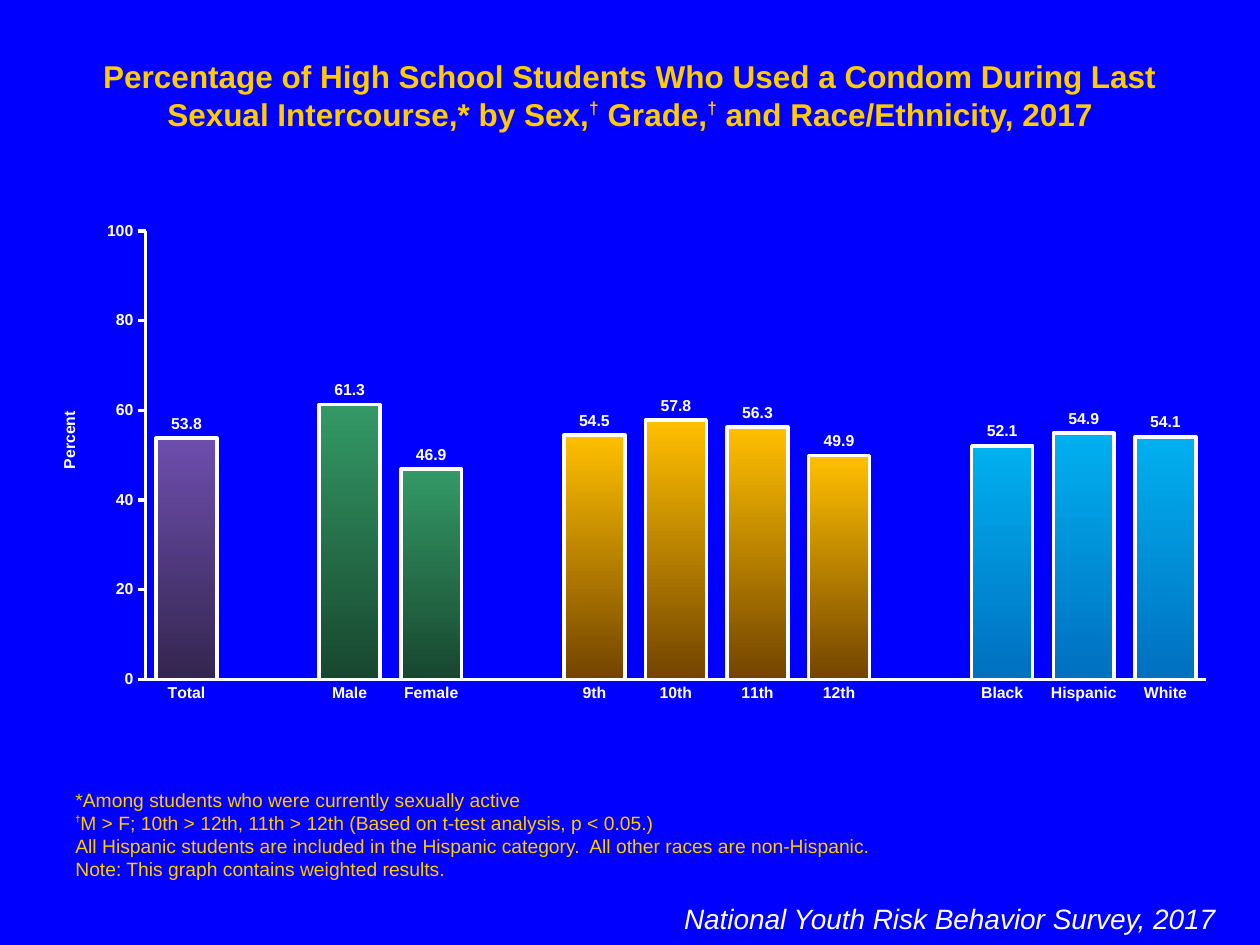
from dataclasses import dataclass

from lxml import etree
from pptx import Presentation
from pptx.chart.data import CategoryChartData
from pptx.dml.color import RGBColor
from pptx.enum.chart import XL_CHART_TYPE, XL_LABEL_POSITION, XL_TICK_MARK
from pptx.enum.text import MSO_ANCHOR, MSO_AUTO_SIZE, PP_ALIGN
from pptx.oxml.ns import qn
from pptx.util import Emu, Pt

COLUMN = XL_CHART_TYPE.COLUMN_CLUSTERED
OUTSIDE_END = XL_LABEL_POSITION.OUTSIDE_END
TICK_NONE, TICK_OUT = XL_TICK_MARK.NONE, XL_TICK_MARK.OUTSIDE
LEFT, CENTER, RIGHT = PP_ALIGN.LEFT, PP_ALIGN.CENTER, PP_ALIGN.RIGHT
TOP, BOTTOM = MSO_ANCHOR.TOP, MSO_ANCHOR.BOTTOM
NO_AUTOFIT = MSO_AUTO_SIZE.NONE
PX_PER_INCH = 126


@dataclass(frozen=True)
class Theme:
    font: str = "Arial"
    background: str = "0000FF"
    accent: str = "FFCC00"
    light: str = "FFFFFF"
    title: int = 18
    title_mark: int = 17
    source: int = 16
    note: int = 11
    note_mark: int = 9
    chart: int = 9
    line: int = 2


@dataclass(frozen=True)
class Box:
    left: int
    top: int
    width: int
    height: int

    def emu(self) -> list[Emu]:
        return [px(n) for n in (self.left, self.top, self.width, self.height)]


@dataclass(frozen=True)
class Group:
    """Neighbouring bars that share one gradient."""
    top: str
    bottom: str
    bars: dict[str, float]


THEME = Theme()
GROUPS = [
    Group("6E4EAE", "33264F", {"Total": 53.8}),
    Group("339966", "18472F", {"Male": 61.3, "Female": 46.9}),
    Group("FFC000", "734400",
          {"9th": 54.5, "10th": 57.8, "11th": 56.3, "12th": 49.9}),
    Group("00B0F0", "0070C0",
          {"Black": 52.1, "Hispanic": 54.9, "White": 54.1}),
]
TITLE = ["Percentage of High School Students Who Used a Condom During Last "
         "Sexual Intercourse,* by Sex,", "†", " Grade,", "†",
         " and Race/Ethnicity, 2017"]
NOTES = [
    ["*Among students who were currently sexually active"],
    ["†", "M > F; 10th > 12th, 11th > 12th (Based on t-test analysis, p < 0.05.)"],
    ["All Hispanic students are included in the Hispanic category.  "
     "All other races are non-Hispanic."],
    ["Note: This graph contains weighted results."],
]


def px(n: int) -> Emu:
    return Emu(round(n * 914400 / PX_PER_INCH))


def rgb(color: str) -> RGBColor:
    return RGBColor.from_string(color)


def style_font(font, size: int, color: str, bold=False, italic=False) -> None:
    font.name, font.size = THEME.font, Pt(size)
    font.bold, font.italic = bold, italic
    font.color.rgb = rgb(color)


def write(sp, paragraphs: list[list[str]], *, size: int, color: str,
          align=LEFT, anchor=TOP, bold=False, italic=False,
          mark_size: int = 0, mark_raise: int = 0) -> None:
    """Fill a shape with paragraphs of runs; daggers are superscript."""
    tf = sp.text_frame
    tf.word_wrap, tf.auto_size, tf.vertical_anchor = True, NO_AUTOFIT, anchor
    for i, runs in enumerate(paragraphs):
        p = tf.add_paragraph() if i else tf.paragraphs[0]
        p.alignment = align
        for text in runs:
            r = p.add_run()
            r.text = text
            is_mark = text == "†"
            style_font(r.font, mark_size if is_mark else size, color,
                       bold or is_mark, italic)
            if is_mark:
                r.font._element.set("baseline", str(mark_raise * 1000))


def set_layout(parent, following: str, x: float, y: float,
               w: float = 0, h: float = 0) -> None:
    """Place a chart part by fractions of the chart space."""
    for old in parent.findall(qn("c:layout")):
        parent.remove(old)
    layout = etree.Element(qn("c:layout"))
    manual = etree.SubElement(layout, qn("c:manualLayout"))
    values = {"xMode": "edge", "yMode": "edge", "x": x, "y": y}
    if w:
        values = {"layoutTarget": "inner", **values, "w": w, "h": h}
    for tag, value in values.items():
        etree.SubElement(manual, qn(f"c:{tag}")).set("val", str(value))
    parent.find(qn(following)).addprevious(layout)


def style_axis(axis, tick) -> None:
    axis.major_tick_mark, axis.minor_tick_mark = tick, TICK_NONE
    axis.has_major_gridlines = False
    style_font(axis.tick_labels.font, THEME.chart, THEME.light, bold=True)
    axis.format.line.color.rgb = rgb(THEME.light)
    axis.format.line.width = Pt(THEME.line)


def add_bar_chart(slide, box: Box, groups: list[Group]) -> None:
    # One empty category separates the groups
    bars = []
    for i, group in enumerate(groups):
        if i:
            bars.append(("", None, None))
        bars += [(name, value, group) for name, value in group.bars.items()]
    data = CategoryChartData(number_format="#,##0.0")
    data.categories = [name for name, _, _ in bars]
    data.add_series("Series 1", [value for _, value, _ in bars])
    chart = slide.shapes.add_chart(COLUMN, *box.emu(), data).chart
    chart.has_title = chart.has_legend = False
    style_font(chart.font, THEME.chart, THEME.light)

    # Axes
    style_axis(chart.category_axis, TICK_NONE)
    axis = chart.value_axis
    style_axis(axis, TICK_OUT)
    axis.minimum_scale, axis.maximum_scale, axis.major_unit = 0, 100, 20
    axis.tick_labels.number_format = "General"
    axis.tick_labels.number_format_is_linked = False
    r = axis.axis_title.text_frame.paragraphs[0].add_run()
    r.text = "Percent"
    style_font(r.font, THEME.chart, THEME.light, bold=True)
    set_layout(axis.axis_title._element, "c:overlay", 0.02, 0.39)

    # Bars and value labels
    plot = chart.plots[0]
    plot.gap_width, plot.overlap, plot.vary_by_categories = 34, 100, False
    plot.has_data_labels = True
    labels = plot.data_labels
    labels.show_value, labels.position = True, OUTSIDE_END
    labels.number_format, labels.number_format_is_linked = "#,##0.0", False
    style_font(labels.font, THEME.chart, THEME.light, bold=True)
    for i, (_, _, group) in enumerate(bars):
        if group is None:
            continue
        fmt = plot.series[0].points[i].format
        fmt.fill.gradient()
        fmt.fill.gradient_angle = 270
        for stop, color in zip(fmt.fill.gradient_stops,
                               (group.top, group.bottom)):
            stop.color.rgb = rgb(color)
        fmt.line.color.rgb = rgb(THEME.light)
        fmt.line.width = Pt(THEME.line)
    plot_area = plot._element.getparent()
    set_layout(plot_area, "c:barChart", 0.095, 0.036, 0.886, 0.895)


def main() -> None:
    prs = Presentation()
    prs.slide_width, prs.slide_height = px(1260), px(945)
    slide = prs.slides.add_slide(prs.slide_layouts[5])
    slide.background.fill.solid()
    slide.background.fill.fore_color.rgb = rgb(THEME.background)

    # Title
    title = slide.shapes.title
    title.left, title.top, title.width, title.height = Box(63, 51, 1134, 88).emu()
    write(title, [TITLE], size=THEME.title, color=THEME.accent, align=CENTER,
          bold=True, mark_size=THEME.title_mark, mark_raise=40)

    # Chart
    add_bar_chart(slide, Box(32, 213, 1197, 501), GROUPS)

    # Footnotes and source
    notes = slide.shapes.add_textbox(*Box(63, 782, 1134, 105).emu())
    write(notes, NOTES, size=THEME.note, color=THEME.accent, anchor=BOTTOM,
          mark_size=THEME.note_mark, mark_raise=50)
    source = slide.shapes.add_textbox(*Box(535, 895, 693, 48).emu())
    write(source, [["National Youth Risk Behavior Survey, 2017"]],
          size=THEME.source, color=THEME.light, align=RIGHT, italic=True)

    prs.save("out.pptx")


if __name__ == "__main__":
    main()
